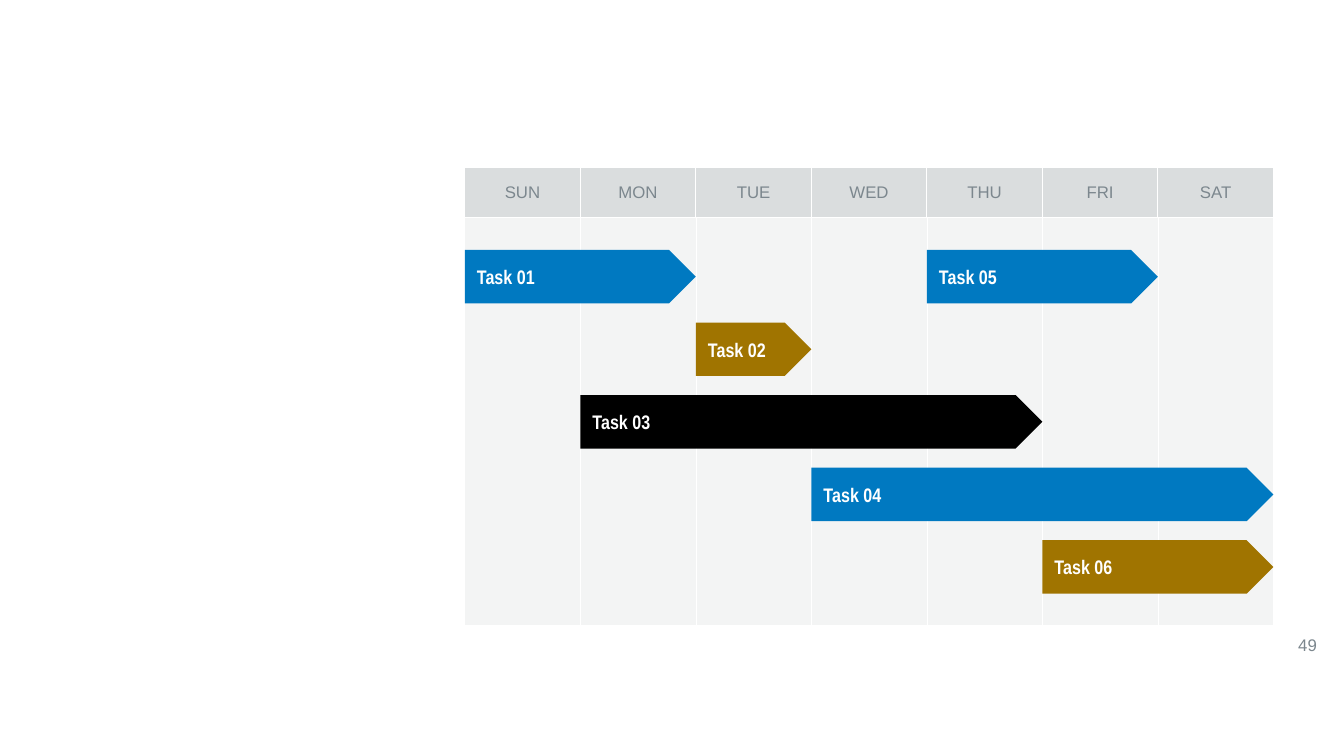
from lxml import etree
from pptx import Presentation
from pptx.dml.color import RGBColor
from pptx.enum.shapes import MSO_SHAPE
from pptx.enum.text import MSO_ANCHOR, PP_ALIGN
from pptx.oxml.ns import qn
from pptx.util import Inches, Pt

PENTAGON = MSO_SHAPE.PENTAGON
MIDDLE = MSO_ANCHOR.MIDDLE
LEFT, CENTER, RIGHT = PP_ALIGN.LEFT, PP_ALIGN.CENTER, PP_ALIGN.RIGHT

WHITE, GRAY, HEADER, BODY = "FFFFFF", "7C878E", "DADDDE", "F3F4F4"
BLUE, GOLD, BLACK = "0079C1", "A07400", "000000"

DAYS = ["SUN", "MON", "TUE", "WED", "THU", "FRI", "SAT"]
TABLE_LEFT, TABLE_TOP, TABLE_WIDTH = 4.61, 1.66, 8.02
ROW_HEIGHTS = [0.5, 4.04]
DAY_WIDTH = TABLE_WIDTH / len(DAYS)
TASK_TOP, TASK_STEP, TASK_HEIGHT = 2.48, 0.72, 0.53

TASKS = [
    {"text": "Task 01", "first_day": 0, "days": 2, "row": 0, "fill": BLUE},
    {"text": "Task 02", "first_day": 2, "days": 1, "row": 1, "fill": GOLD},
    {"text": "Task 05", "first_day": 4, "days": 2, "row": 0, "fill": BLUE},
    {"text": "Task 03", "first_day": 1, "days": 4, "row": 2, "fill": BLACK},
    {"text": "Task 04", "first_day": 3, "days": 4, "row": 3, "fill": BLUE},
    {"text": "Task 06", "first_day": 5, "days": 2, "row": 4, "fill": GOLD},
]


def color(value):
    return RGBColor.from_string(value)


class WeekSlide:
    """Holds the text styles and the slide that the week plan is drawn on."""

    label = {"name": "Arial", "size": Pt(12), "bold": False}
    task_label = {"name": "Arial Narrow", "size": Pt(14), "bold": True}
    task_frame = {
        "vertical_anchor": MIDDLE,
        "word_wrap": True,
        "margin_left": Inches(0.12),
        "margin_top": Inches(0.04),
        "margin_right": Inches(0.04),
        "margin_bottom": Inches(0.04),
    }

    def __init__(self, slide):
        self.slide = slide

    def apply(self, target, values):
        for name, value in values.items():
            setattr(target, name, value)

    def add_text(self, text_frame, text, style, text_color, alignment):
        paragraph = text_frame.paragraphs[0]
        paragraph.alignment = alignment
        run = paragraph.add_run()
        run.text = text
        self.apply(run.font, style)
        run.font.color.rgb = color(text_color)

    def format_cell(self, cell, fill, border_width):
        cell.fill.solid()
        cell.fill.fore_color.rgb = color(fill)
        properties = cell._tc.get_or_add_tcPr()
        for index, side in enumerate(["lnL", "lnR", "lnT", "lnB"]):
            line = etree.Element(qn(f"a:{side}"), w=str(Pt(border_width)))
            solid = etree.SubElement(line, qn("a:solidFill"))
            etree.SubElement(solid, qn("a:srgbClr"), val=WHITE)
            properties.insert(index, line)

    def calendar(self):
        frame = self.slide.shapes.add_table(
            len(ROW_HEIGHTS), len(DAYS), Inches(TABLE_LEFT), Inches(TABLE_TOP),
            Inches(TABLE_WIDTH), Inches(sum(ROW_HEIGHTS)))
        table = frame.table
        self.apply(table, {"first_row": False, "horz_banding": False})
        for row, height in zip(table.rows, ROW_HEIGHTS):
            row.height = Inches(height)
        for index, day in enumerate(DAYS):
            table.columns[index].width = Inches(DAY_WIDTH)
            header = table.cell(0, index)
            header.vertical_anchor = MIDDLE
            self.add_text(header.text_frame, day, self.label, GRAY, CENTER)
            self.format_cell(header, HEADER, 0.75)
            self.format_cell(table.cell(1, index), BODY, 0.5)

    def task(self, text, first_day, days, row, fill):
        shape = self.slide.shapes.add_shape(
            PENTAGON,
            Inches(TABLE_LEFT + first_day * DAY_WIDTH),
            Inches(TASK_TOP + row * TASK_STEP),
            Inches(days * DAY_WIDTH), Inches(TASK_HEIGHT))
        shape.shadow.inherit = False
        shape.fill.solid()
        shape.fill.fore_color.rgb = color(fill)
        shape.line.fill.background()
        self.apply(shape.text_frame, self.task_frame)
        self.add_text(shape.text_frame, text, self.task_label, WHITE, LEFT)

    def page_number(self, text):
        box = self.slide.shapes.add_textbox(
            Inches(12.4), Inches(6.2), Inches(0.76), Inches(0.4))
        self.apply(box.text_frame, {"vertical_anchor": MIDDLE, "word_wrap": True})
        self.add_text(box.text_frame, text, self.label, GRAY, RIGHT)


def main():
    presentation = Presentation()
    presentation.slide_width = Inches(13.33)
    presentation.slide_height = Inches(7.5)
    blank_layout = presentation.slide_layouts[6]
    week = WeekSlide(presentation.slides.add_slide(blank_layout))
    week.calendar()
    week.page_number("49")
    for task in TASKS:
        week.task(**task)
    presentation.save("out.pptx")


if __name__ == "__main__":
    main()
